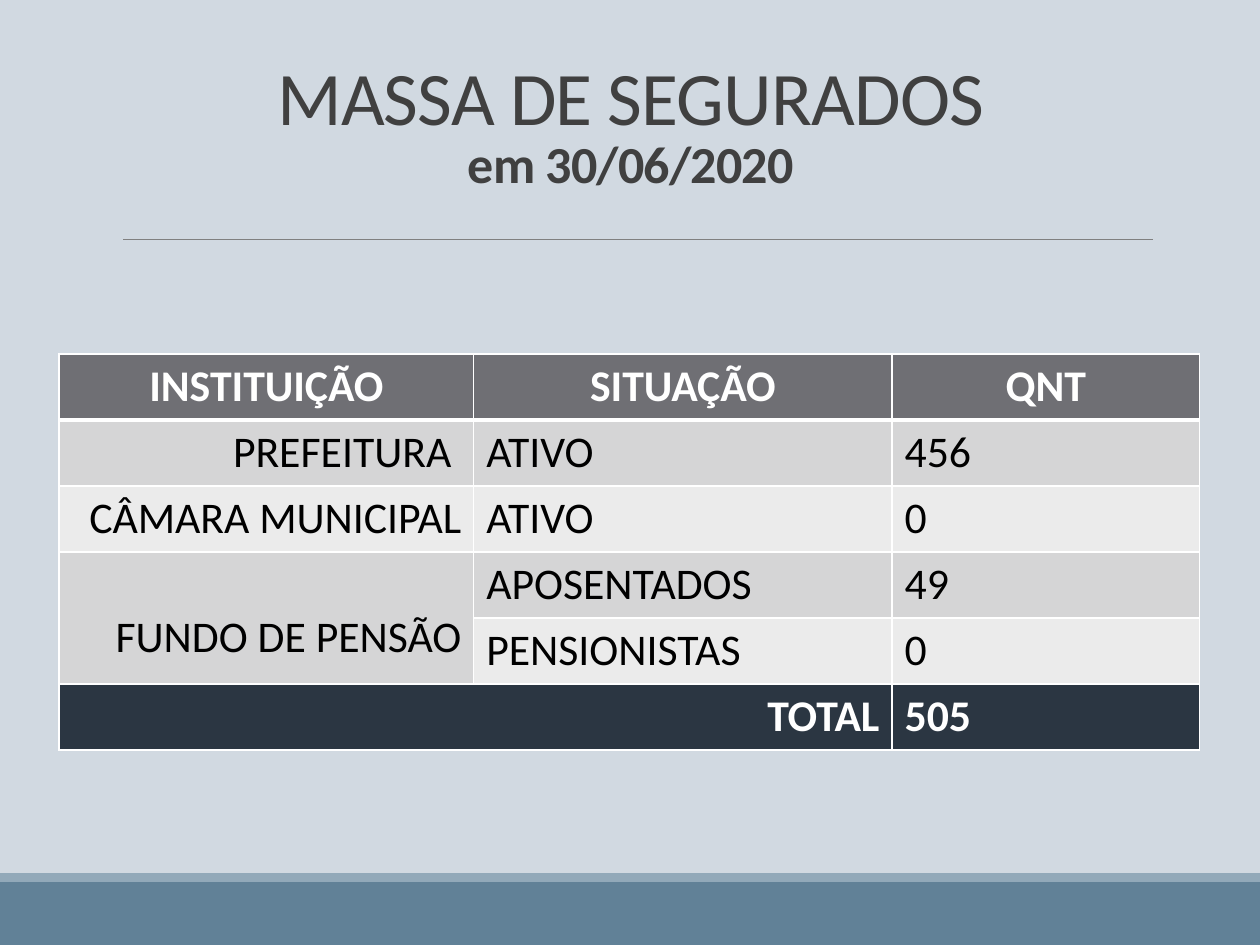
import lxml.etree
import pptx
import pptx.dml.color
import pptx.enum.shapes
import pptx.enum.text
import pptx.oxml.ns
import pptx.util

ALIGN = pptx.enum.text.PP_ALIGN
WHITE, BLACK = "FFFFFF", "000000"
HEADER, TOTAL, BAND, LIGHT = "6F6F74", "2B3642", "D5D5D6", "EBEBEB"


def rgb(value):
    return pptx.dml.color.RGBColor.from_string(value)


def sub(parent, tag, **attrs):
    el = lxml.etree.SubElement(parent, pptx.oxml.ns.qn(tag))
    for key, value in attrs.items():
        el.set(key, str(value))
    return el


def write(p, text, size=25, color=BLACK, bold=False, align=ALIGN.LEFT, spacing=None):
    p.alignment = align
    r = p.add_run()
    r.text = text
    r.font.name = "Calibri"
    r.font.size = pptx.util.Pt(size)
    r.font.bold = bold
    r.font.color.rgb = rgb(color)
    if spacing is not None:
        r.font._element.set("spc", str(int(spacing * 100)))


class Deck:
    def __init__(self, background):
        self.prs = pptx.Presentation()
        self.prs.slide_width = pptx.util.Inches(10)
        self.prs.slide_height = pptx.util.Inches(7.5)
        self.s = self.prs.slides.add_slide(self.prs.slide_layouts[5])
        fill = self.s.background.fill
        fill.solid()
        fill.fore_color.rgb = rgb(background)

    def x(self, share):
        return int(self.prs.slide_width * share)

    def y(self, share):
        return int(self.prs.slide_height * share)

    def box(self, left, top, width, height):
        return self.x(left), self.y(top), self.x(width), self.y(height)

    def bar(self, top, height, color):
        sp = self.s.shapes.add_shape(
            pptx.enum.shapes.MSO_SHAPE.RECTANGLE, *self.box(0, top, 1, height))
        sp.shadow.inherit = False
        sp.fill.solid()
        sp.fill.fore_color.rgb = rgb(color)
        sp.line.fill.background()

    def rule(self, left, right, y, color, width):
        line = self.s.shapes.add_connector(
            pptx.enum.shapes.MSO_CONNECTOR.STRAIGHT,
            self.x(left), self.y(y), self.x(right), self.y(y))
        line.line.color.rgb = rgb(color)
        line.line.width = pptx.util.Pt(width)
        sub(line._element.spPr, "a:effectLst")

    def title(self, heading, subheading, box):
        sp = self.s.shapes.title
        sp.left, sp.top, sp.width, sp.height = self.box(*box)
        tf = sp.text_frame
        tf.word_wrap = True
        tf.auto_size = pptx.enum.text.MSO_AUTO_SIZE.NONE
        tf.vertical_anchor = pptx.enum.text.MSO_ANCHOR.BOTTOM
        p = tf.paragraphs[0]
        p.line_spacing = 0.85
        style = dict(color="404040", align=ALIGN.CENTER, spacing=-0.5)
        write(p, heading, size=43.2, **style)
        p.add_line_break()
        write(p, subheading, size=29.7, bold=True, **style)

    def table(self, rows, widths, box):
        frame = self.s.shapes.add_table(len(rows), len(widths), *self.box(*box))
        table = frame.table
        table.horz_banding = False
        for column, width in zip(table.columns, widths):
            column.width = self.x(width)
        last = len(rows) - 1
        for i, row in enumerate(rows):
            for j, text in enumerate(row):
                fill = HEADER if i == 0 else TOTAL if i == last else BAND if i % 2 else LIGHT
                align = ALIGN.CENTER if i == 0 else ALIGN.RIGHT if j == 0 else ALIGN.LEFT
                strong = i in (0, last)
                cell = table.cell(i, j)
                self.borders(cell, top=3 if i == 1 else 1, bottom=3 if i == 0 else 1)
                cell.fill.solid()
                cell.fill.fore_color.rgb = rgb(fill)
                if text:
                    write(cell.text_frame.paragraphs[0], text, bold=strong,
                          color=WHITE if strong else BLACK, align=align)
        return table

    def borders(self, cell, top, bottom):
        tc_pr = cell._tc.get_or_add_tcPr()
        for side, width in zip("LRTB", (1, 1, top, bottom)):
            ln = sub(tc_pr, f"a:ln{side}", w=pptx.util.Pt(width))
            sub(sub(ln, "a:solidFill"), "a:srgbClr", val=WHITE)


def main():
    deck = Deck("D1D9E1")
    deck.bar(7 / 7.5, 0.5 / 7.5, "618197")
    deck.bar(6.93 / 7.5, 0.07 / 7.5, "92A9B9")
    deck.rule(0.098, 0.915, 1.9 / 7.5, "808080", 0.5)
    deck.title("MASSA DE SEGURADOS", "em 30/06/2020", (0.088, 0.08, 0.825, 0.99 / 7.5))

    rows = [
        ("INSTITUIÇÃO", "SITUAÇÃO", "QNT"),
        ("PREFEITURA ", "ATIVO", "456"),
        ("CÂMARA MUNICIPAL", "ATIVO", "0"),
        ("FUNDO DE PENSÃO", "APOSENTADOS", "49"),
        ("", "PENSIONISTAS", "0"),
        ("TOTAL", "", "505"),
    ]
    table = deck.table(rows, (0.329, 0.332, 0.244), (0.047, 2.81 / 7.5, 0.905, 3.12 / 7.5))
    fund = table.cell(3, 0)
    fund.merge(table.cell(4, 0))
    fund.margin_top = pptx.util.Inches(0.47)
    table.cell(5, 0).merge(table.cell(5, 1))
    deck.prs.save("out.pptx")


if __name__ == "__main__":
    main()
